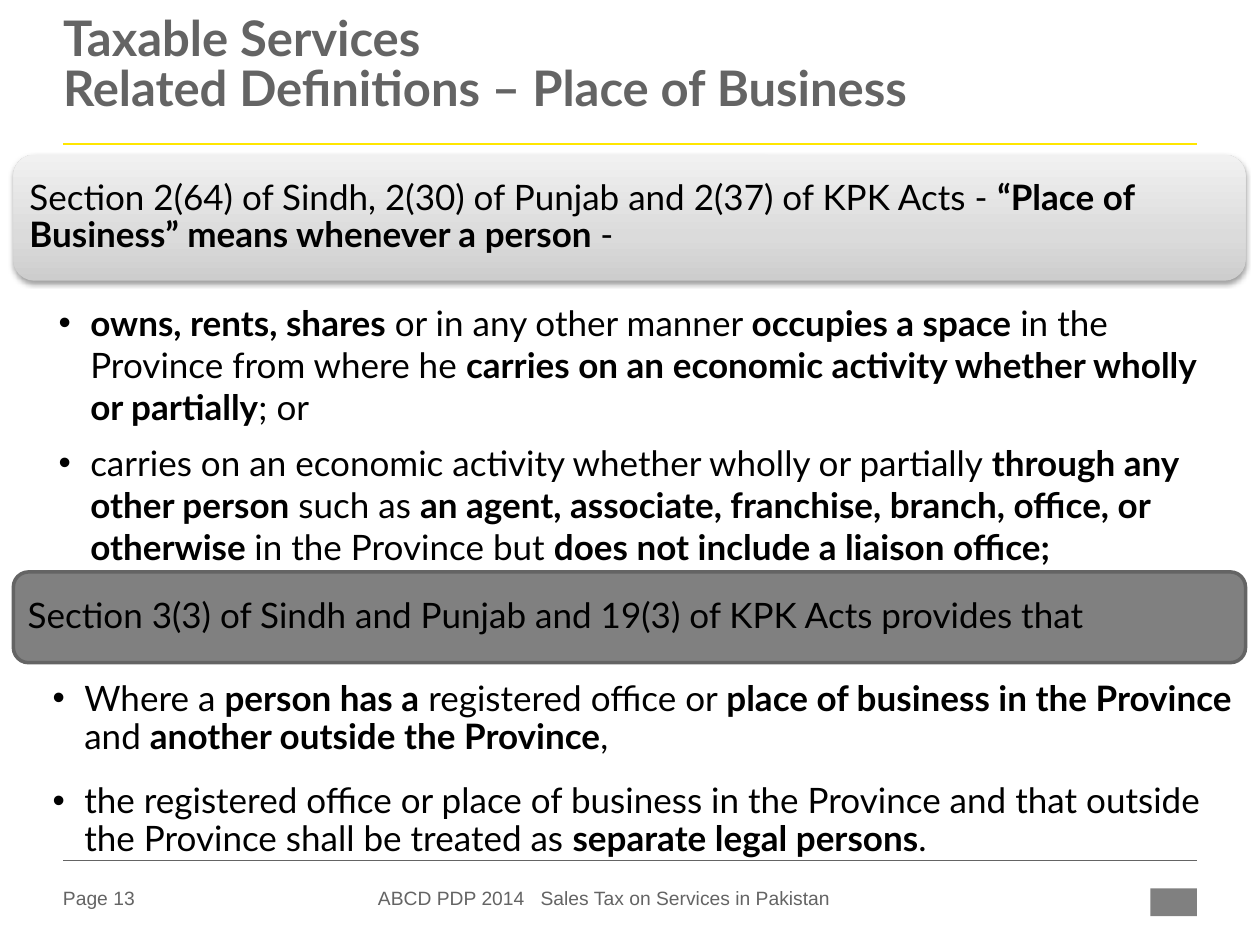
"""Build the slide on the place of business for taxable services."""
from pptx import Presentation
from pptx.dml.color import RGBColor
from pptx.enum.shapes import MSO_CONNECTOR, MSO_SHAPE
from pptx.enum.text import MSO_ANCHOR, MSO_AUTO_SIZE, PP_ALIGN
from pptx.oxml import parse_xml
from pptx.oxml.ns import nsdecls, qn
from pptx.util import Cm, Pt

HUES = {"text": "000000", "grey": "646464", "rule": "FFE600", "fill": "808080",
        "low": "CDCDCD", "mid": "DBDBDB", "high": "F1F1F1"}
TITLE = "Taxable Services\nRelated Definitions – Place of Business"
HEADS = [
    ("Section 2(64) of Sindh, 2(30) of Punjab and 2(37) of KPK Acts - "
     "**“Place of Business” means whenever a person **-", (0.27, 3.12, 24.84, 2.54)),
    ("Section 3(3) of Sindh and Punjab and 19(3) of KPK Acts provides that",
     (0.27, 11.53, 24.84, 1.83)),
]
LISTS = [
    (["**owns, rents, shares** or in any other manner **occupies a space** in the Province "
      "from where he **carries on an economic activity whether wholly or partially**; or",
      "carries on an economic activity whether wholly or partially **through any other person** "
      "such as **an agent, associate, franchise, branch, office, or otherwise **"
      "in the Province but **does not include a liaison office;**"],
     (1.18, 6.07, 23.74, 5.2), {"line_spacing": 1.0, "space_after": Pt(8)}),
    (["Where a **person has a** registered office or **place of business in the Province** "
      "and **another outside the Province**,",
      "the registered office or place of business in the Province and that outside "
      "the Province shall be treated as **separate legal persons**."],
     (1.06, 13.73, 23.95, 3.67), {"line_spacing": 0.9, "space_after": Pt(15.4)}),
]
FOOT = [("Page 13", 1.27, 3), ("ABCD PDP 2014", 7.62, 3.2),
        ("Sales Tax on Services in Pakistan", 10.9, 7)]
RULES = [(2.9, "rule", 1.5), (17.35, "grey", 0.25)]
EDGE, SPAN = 1.27, 22.86
FLAT = {"margin_left": 0, "margin_right": 0, "margin_top": 0, "margin_bottom": 0,
        "word_wrap": True, "auto_size": MSO_AUTO_SIZE.NONE}
BASE = {"alignment": PP_ALIGN.LEFT, "space_before": Pt(0)}
BODY = {"name": "Lato", "size": Pt(20)}


def put(obj, vals):
    for key, val in vals.items():
        setattr(obj, key, val)


def hue(key):
    return RGBColor.from_string(HUES[key])


def place(shape, box):
    put(shape, dict(zip(("left", "top", "width", "height"), map(Cm, box))))


def write(frame, texts, font, tone, para, wrap):
    put(frame, {**FLAT, **wrap})
    for num, text in enumerate(texts):
        par = frame.add_paragraph() if num else frame.paragraphs[0]
        put(par, {**BASE, **para})
        for row, line in enumerate(text.split("\n")):
            if row:
                par.add_line_break()
            for odd, part in enumerate(line.split("**")):
                if part:
                    run = par.add_run()
                    run.text = part
                    put(run.font, {"bold": odd % 2 == 1, **font})
                    run.font.color.rgb = hue(tone)


def block(slide, kind, box):
    shape = slide.shapes.add_shape(kind, *map(Cm, box))
    shape.shadow.inherit = False
    shape.fill.solid()
    shape.fill.fore_color.rgb = hue("fill")
    shape.line.fill.background()
    return shape


def shade(shape):
    stops = "".join(f'<a:gs pos="{pos}"><a:srgbClr val="{HUES[key]}"/></a:gs>'
                    for pos, key in ((0, "low"), (35000, "mid"), (100000, "high")))
    props = shape.element.spPr
    props.replace(props.find(qn("a:solidFill")), parse_xml(
        f'<a:gradFill {nsdecls("a")} rotWithShape="1"><a:gsLst>{stops}</a:gsLst>'
        '<a:lin ang="16200000" scaled="0"/></a:gradFill>'))
    props.find(qn("a:effectLst")).append(parse_xml(
        f'<a:outerShdw {nsdecls("a")} blurRad="{Pt(3.1)}" dist="{Pt(1.6)}" dir="5400000" '
        'rotWithShape="0"><a:srgbClr val="000000"><a:alpha val="38000"/></a:srgbClr>'
        '</a:outerShdw>'))


def main():
    deck = Presentation()
    put(deck, {"slide_width": Cm(25.4), "slide_height": Cm(19.05)})
    slide = deck.slides.add_slide(deck.slide_layouts[3])
    title, *lists = slide.placeholders

    for top, key, wide in RULES:
        rule = slide.shapes.add_connector(
            MSO_CONNECTOR.STRAIGHT, *map(Cm, (EDGE, top, EDGE + SPAN, top)))
        put(rule.line, {"width": Pt(wide)})
        rule.line.color.rgb = hue(key)
        rule.element.spPr.append(parse_xml(f'<a:effectLst {nsdecls("a")}/>'))

    place(title, (EDGE, 0.33, SPAN, 2.39))
    write(title.text_frame, [TITLE], {"name": "Lato", "size": Pt(28), "bold": True}, "grey",
          {"line_spacing": 0.85}, {"vertical_anchor": MSO_ANCHOR.TOP})
    for brk in title.element.iter(qn("a:br")):
        brk.insert(0, parse_xml(f'<a:rPr {nsdecls("a")} sz="2800"/>'))

    bars = []
    for text, box in HEADS:
        bar = block(slide, MSO_SHAPE.ROUNDED_RECTANGLE, box)
        write(bar.text_frame, [text], BODY, "text", {"line_spacing": 0.9},
              {"margin_left": Cm(0.2), "margin_right": Cm(0.2),
               "vertical_anchor": MSO_ANCHOR.MIDDLE})
        bars.append(bar)
    shade(bars[0])
    bars[1].line.width = Pt(2)
    bars[1].line.color.rgb = hue("grey")

    for body, (texts, box, para) in zip(lists, LISTS):
        place(body, box)
        write(body.text_frame, texts, BODY, "text", para, {"vertical_anchor": MSO_ANCHOR.TOP})
        for par in body.text_frame.paragraphs:
            props = par._p.get_or_add_pPr()
            props.set("marL", str(Cm(0.64)))
            props.set("indent", str(-Cm(0.64)))

    for text, left, wide in FOOT:
        note = slide.shapes.add_textbox(*map(Cm, (left, 17.81, wide, 0.56)))
        write(note.text_frame, [text], {"name": "Arial", "size": Pt(11)}, "grey", {},
              {"vertical_anchor": MSO_ANCHOR.MIDDLE})
    block(slide, MSO_SHAPE.RECTANGLE, (23.19, 17.91, 0.94, 0.56))
    deck.save("out.pptx")


if __name__ == "__main__":
    main()
